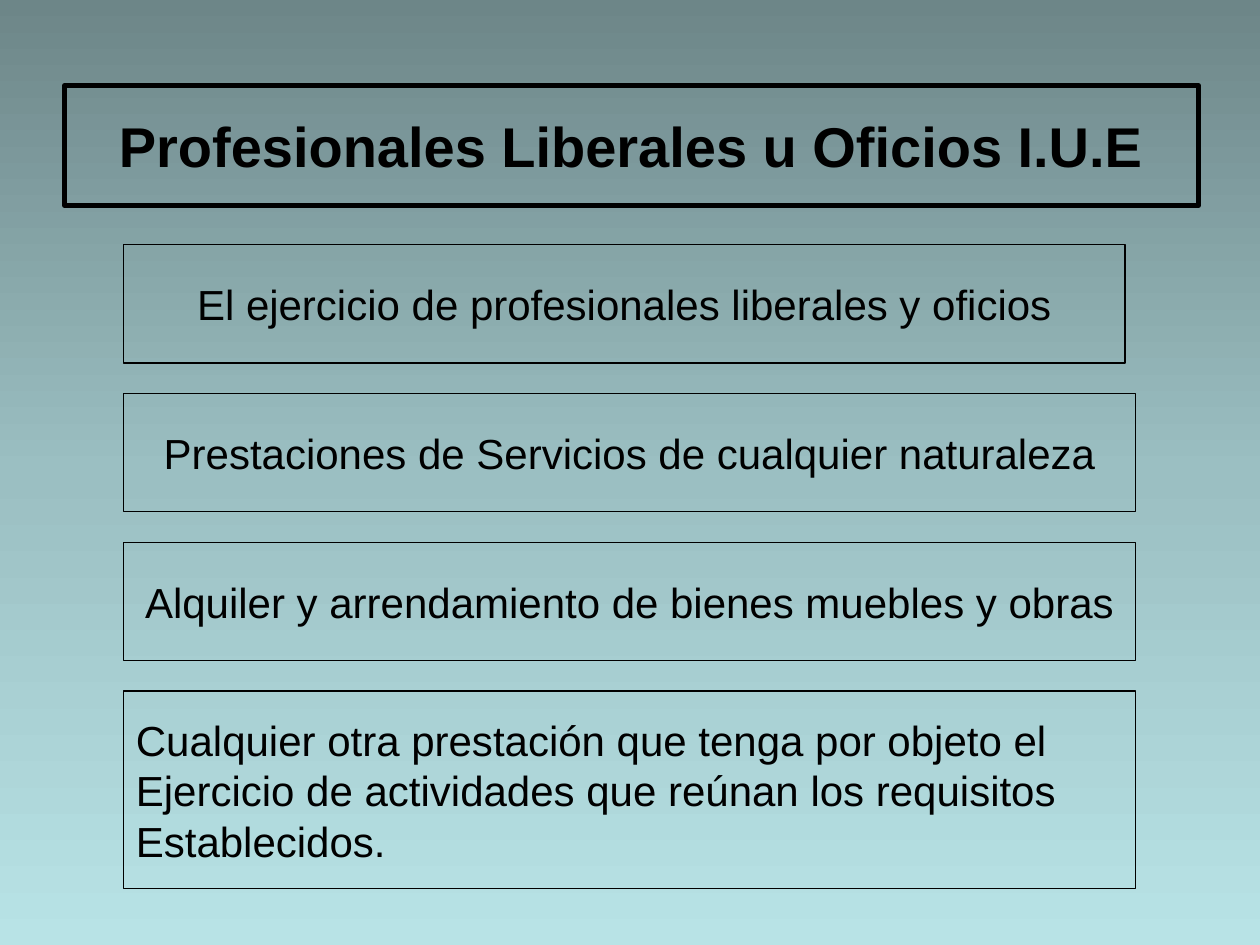
from copy import deepcopy
from dataclasses import dataclass

from pptx import Presentation
from pptx.dml.color import RGBColor
from pptx.enum.shapes import MSO_SHAPE
from pptx.enum.text import MSO_ANCHOR, PP_ALIGN
from pptx.util import Cm, Pt


@dataclass(frozen=True)
class Theme:
    font: str = "Arial"
    ink: str = "000000"
    gradient: tuple = ((0, "6D8688"), (0.5, "9BBFC2"), (1, "B8E3E6"))
    title_size: float = 32
    body_size: float = 24
    title_line: float = 3
    body_line: float = 0.75


THEME = Theme()

TITLE = "Profesionales Liberales u Oficios I.U.E"
# Lines of text, box width and box height in cm, alignment
ACTIVITIES = [
    (["El ejercicio de profesionales liberales y oficios"],
     20.19, 2.39, PP_ALIGN.CENTER),
    (["Prestaciones de Servicios de cualquier naturaleza"],
     20.4, 2.39, PP_ALIGN.CENTER),
    (["Alquiler y arrendamiento de bienes muebles y obras"],
     20.4, 2.39, PP_ALIGN.CENTER),
    (["Cualquier otra prestación que tenga por objeto el",
      "Ejercicio de actividades que reúnan los requisitos",
      "Establecidos."],
     20.4, 3.99, PP_ALIGN.LEFT),
]


def paint_background(s):
    fill = s.background.fill
    fill.gradient()
    fill.gradient_angle = 270
    stop_list = s.element.xpath(".//a:gsLst")[0]
    stop_list.append(deepcopy(stop_list[-1]))
    for stop, (position, color) in zip(fill.gradient_stops, THEME.gradient):
        stop.position = position
        stop.color.rgb = RGBColor.from_string(color)


def add_framed_text(s, box, lines, size, line_width, align, bold=False, wrap=False):
    """Add an unfilled, outlined rectangle; box is left, top, width, height in cm."""
    ink = RGBColor.from_string(THEME.ink)
    sp = s.shapes.add_shape(MSO_SHAPE.RECTANGLE, *map(Cm, box))
    sp.shadow.inherit = False
    sp.fill.background()
    sp.line.color.rgb = ink
    sp.line.width = Pt(line_width)
    tf = sp.text_frame
    tf.word_wrap = wrap
    tf.vertical_anchor = MSO_ANCHOR.MIDDLE
    tf.text = "\n".join(lines)
    for p in tf.paragraphs:
        p.alignment = align
        for r in p.runs:
            r.font.name = THEME.font
            r.font.size = Pt(size)
            r.font.bold = bold
            r.font.color.rgb = ink


def add_title(s, box):
    add_framed_text(s, box, [TITLE], THEME.title_size, THEME.title_line,
                    PP_ALIGN.CENTER, bold=True, wrap=True)


def add_activities(s, left, top, gap):
    """Stack the activity boxes downwards with equal gaps."""
    for lines, width, height, align in ACTIVITIES:
        add_framed_text(s, (left, top, width, height), lines,
                        THEME.body_size, THEME.body_line, align)
        top += height + gap


def main():
    prs = Presentation()
    prs.slide_width, prs.slide_height = Cm(25.4), Cm(19.05)
    s = prs.slides.add_slide(prs.slide_layouts[6])
    paint_background(s)
    add_title(s, (1.3, 1.73, 22.86, 2.41))
    add_activities(s, left=2.49, top=4.93, gap=0.61)
    prs.save("out.pptx")


if __name__ == "__main__":
    main()
